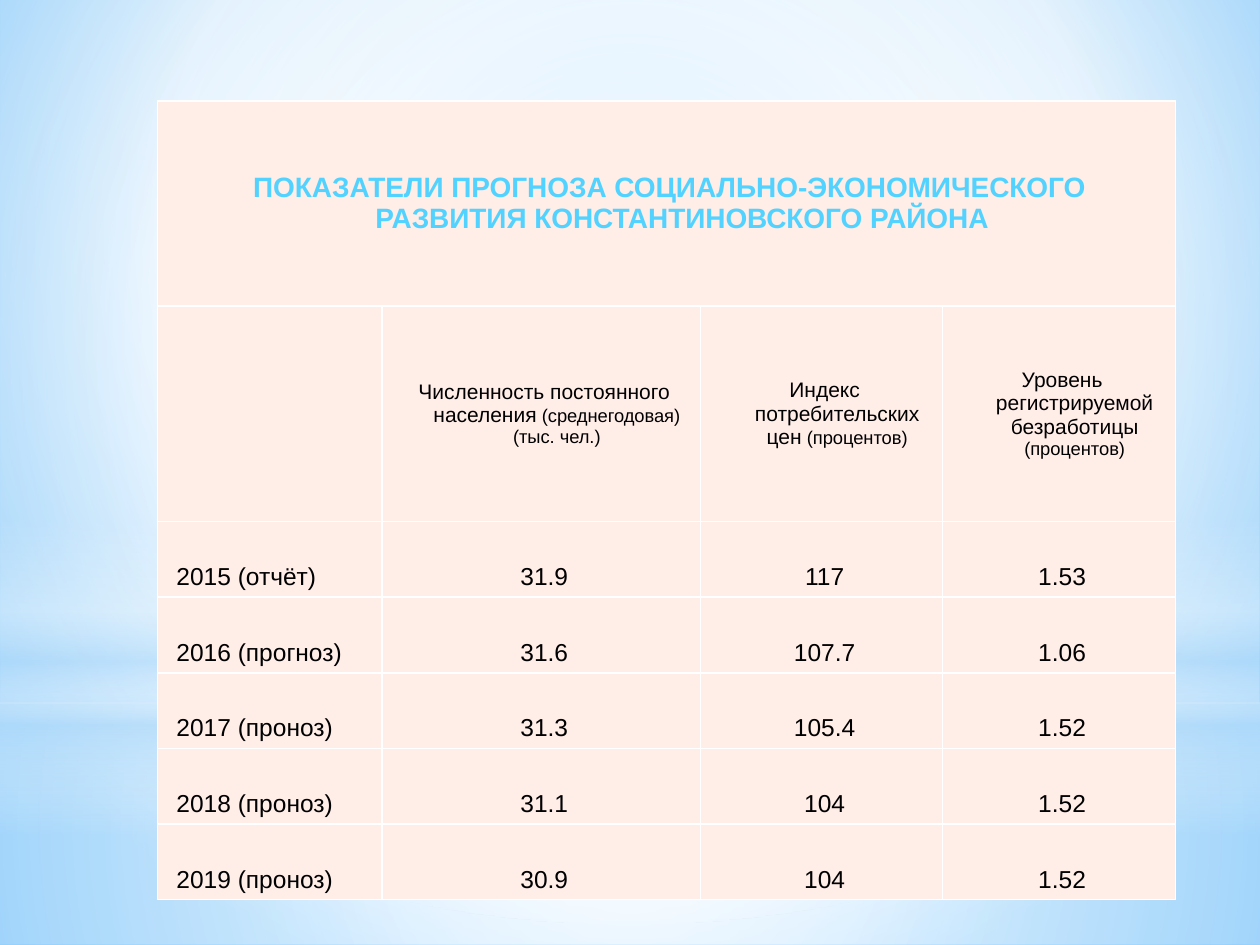
from pptx import Presentation
from pptx.dml.color import RGBColor
from pptx.enum.shapes import MSO_SHAPE
from pptx.enum.text import MSO_ANCHOR, PP_ALIGN
from pptx.oxml import parse_xml
from pptx.oxml.ns import nsdecls, qn
from pptx.util import Inches, Pt

WHITE = RGBColor(0xFF, 0xFF, 0xFF)
BLACK = RGBColor(0x00, 0x00, 0x00)
PINK = RGBColor(0xFF, 0xED, 0xE8)
CYAN = RGBColor(0x52, 0xD2, 0xFF)
MIST = RGBColor(0xB4, 0xDC, 0xFA)
SKY = RGBColor(0x9E, 0xD5, 0xFF)
BLUE = RGBColor(0x5B, 0xB9, 0xFF)

WIDE, HIGH = Inches(10), Inches(7.5)
CENTRE = (50, 50, 50, 50)

TITLE = "ПОКАЗАТЕЛИ ПРОГНОЗА СОЦИАЛЬНО-ЭКОНОМИЧЕСКОГО РАЗВИТИЯ КОНСТАНТИНОВСКОГО РАЙОНА"
HEADS = [
    ("Численность постоянного населения", " (среднегодовая) (тыс. чел.)"),
    ("Индекс потребительских цен", " (процентов)"),
    ("Уровень регистрируемой безработицы ", "(процентов)"),
]
YEARS = [
    ("2015 (отчёт)", "31.9", "117", "1.53"),
    ("2016 (прогноз)", "31.6", "107.7", "1.06"),
    ("2017 (проноз)", "31.3", "105.4", "1.52"),
    ("2018 (проноз)", "31.1", "104", "1.52"),
    ("2019 (проноз)", "30.9", "104", "1.52"),
]


class Deck:
    """Holds the style and the current slide; lengths are shares of its size."""

    font = "Arial"

    def __init__(self):
        self.file = Presentation()
        self.file.slide_width, self.file.slide_height = WIDE, HIGH
        self.slide = self.file.slides.add_slide(self.file.slide_layouts[6])

    def blend(self, fill, root, stops, focus=None):
        """Give the root's fill stops of (place, colour, opacity), all in percent."""
        fill.gradient()
        marks = "".join(
            f'<a:gs pos="{place * 1000}"><a:srgbClr val="{tint}">'
            f'<a:alpha val="{alpha * 1000}"/></a:srgbClr></a:gs>'
            for place, tint, alpha in stops)
        if focus:
            sides = " ".join(f'{s}="{v * 1000}"' for s, v in zip("ltrb", focus))
            way = f'<a:path path="circle"><a:fillToRect {sides}/></a:path>'
        else:
            way = '<a:lin ang="5400000" scaled="0"/>'
        old = root.find(".//" + qn("a:gradFill"))
        old.getparent().replace(old, parse_xml(
            f'<a:gradFill {nsdecls("a")} rotWithShape="1">'
            f'<a:gsLst>{marks}</a:gsLst>{way}</a:gradFill>'))

    def sky(self, stops, focus):
        """Fill the slide background."""
        self.blend(self.slide.background.fill, self.slide.element, stops, focus)

    def glow(self, kind, top, tall, stops, focus=None):
        """Add a full-width shape with a soft gradient."""
        shape = self.slide.shapes.add_shape(
            kind, 0, round(HIGH * top), WIDE, round(HIGH * tall))
        shape.shadow.inherit = False
        shape.line.fill.background()
        self.blend(shape.fill, shape.element, stops, focus)

    def grid(self, left, top, cols, rows):
        """Add a plain table with the given column and row shares."""
        table = self.slide.shapes.add_table(
            len(rows), len(cols), round(WIDE * left), round(HIGH * top),
            round(WIDE * sum(cols)), round(HIGH * sum(rows))).table
        table.first_row = table.horz_banding = False
        for col, share in zip(table.columns, cols):
            col.width = round(WIDE * share)
        for row, share in zip(table.rows, rows):
            row.height = round(HIGH * share)
        for cell in table.iter_cells():
            cell.fill.solid()
            cell.fill.fore_color.rgb = PINK
            self.edge(cell)
        return table

    def edge(self, cell):
        """Draw thin white borders round a cell."""
        props = cell._tc.get_or_add_tcPr()
        for spot, side in enumerate("LRTB"):
            props.insert(spot, parse_xml(
                f'<a:ln{side} {nsdecls("a")} w="{Pt(1)}"><a:solidFill>'
                f'<a:srgbClr val="{WHITE}"/></a:solidFill></a:ln{side}>'))

    def label(self, cell, parts, align=PP_ALIGN.CENTER, anchor=MSO_ANCHOR.MIDDLE,
              tint=BLACK, bold=False):
        """Put parts of (text, size) in a cell with a hanging indent."""
        cell.vertical_anchor = anchor
        para = cell.text_frame.paragraphs[0]
        para.alignment = align
        props = para._p.get_or_add_pPr()
        props.set("marL", str(Inches(0.25)))
        props.set("indent", str(Inches(-0.2)))
        for text, size in parts:
            run = para.add_run()
            run.text = text
            run.font.name, run.font.size = self.font, Pt(size)
            run.font.bold, run.font.color.rgb = bold, tint


def main():
    deck = Deck()

    # Sky background and its layers of light
    deck.sky([(0, SKY, 100), (60, WHITE, 100), (100, BLUE, 100)], (20, 10, 20, 60))
    split = 0.744
    deck.glow(MSO_SHAPE.RECTANGLE, split, 1 - split,
              [(0, WHITE, 91), (37, WHITE, 76), (100, MIST, 79)], CENTRE)
    deck.glow(MSO_SHAPE.RECTANGLE, 0, split,
              [(0, WHITE, 89), (48, WHITE, 62), (100, MIST, 79)], CENTRE)
    deck.glow(MSO_SHAPE.RECTANGLE, 0.55, 1 / 3,
              [(0, WHITE, 0), (29, WHITE, 30), (45, MIST, 40),
               (55, WHITE, 26), (65, MIST, 60), (100, WHITE, 0)])
    deck.glow(MSO_SHAPE.OVAL, 0.233, split, [(0, WHITE, 100), (56, WHITE, 0)], CENTRE)

    # Table with its title row
    table = deck.grid(0.125, 0.107, [0.178, 0.253, 0.192, 0.185],
                      [0.217, 0.228] + [0.08] * len(YEARS))
    table.cell(0, 0).merge(table.cell(0, 3))
    deck.label(table.cell(0, 0), [(TITLE, 16)], tint=CYAN, bold=True)

    # Column heads
    for col, (name, unit) in enumerate(HEADS, 1):
        deck.label(table.cell(1, col), [(name, 12), (unit, 10.5)])

    # Yearly figures
    for row, year in enumerate(YEARS, 2):
        for col, text in enumerate(year):
            align = PP_ALIGN.CENTER if col else PP_ALIGN.LEFT
            deck.label(table.cell(row, col), [(text, 14)], align, MSO_ANCHOR.BOTTOM)

    deck.file.save("out.pptx")


if __name__ == "__main__":
    main()
